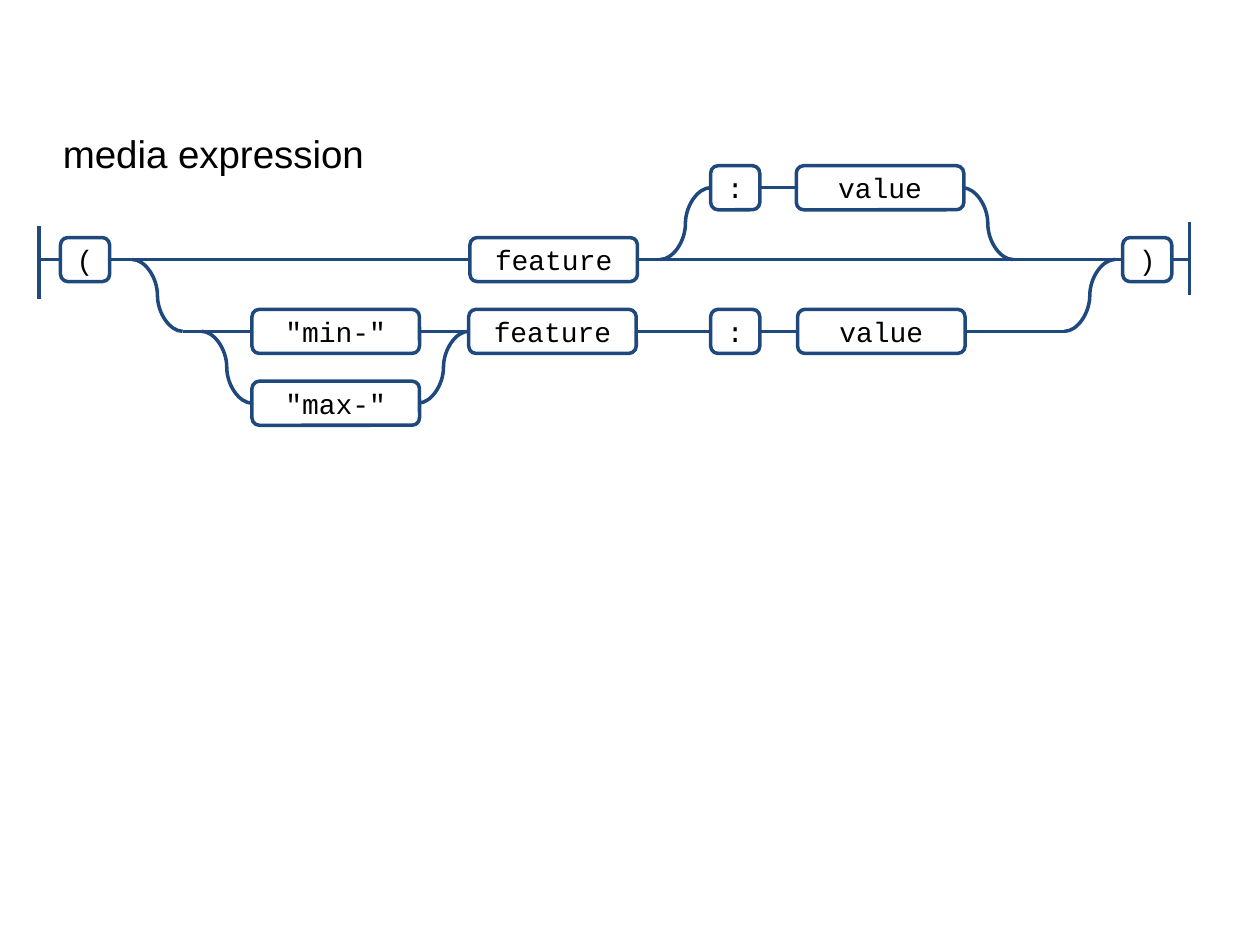
from pptx import Presentation
from pptx.dml.color import RGBColor
from pptx.enum.shapes import MSO_CONNECTOR as Link, MSO_SHAPE as Preset
from pptx.enum.text import MSO_ANCHOR as Anchor, PP_ALIGN as Align
from pptx.oxml.ns import qn
from pptx.util import Inches, Pt
from lxml.etree import SubElement

COLORS = {"track": "1F497D", "token": "FFFFFF", "text": "000000"}
TOKEN_HEIGHT, NARROW, WIDE = 0.35, 0.39, 1.33
BEND = 0.4
UPPER, MAIN, LOWER, BOTTOM = 1.49, 2.06, 2.63, 3.2


class RailroadDiagram:
    """Draws the tokens and tracks of a syntax diagram on one slide."""

    def __init__(self, slide):
        self.shapes = slide.shapes

    def color(self, name):
        return RGBColor.from_string(COLORS[name])

    def label(self, frame, text, font_name, size):
        frame.text = text
        font = frame.paragraphs[0].runs[0].font
        font.name, font.size = font_name, Pt(size)
        font.color.rgb = self.color("text")

    def title(self, text, left, top, width, height):
        box = self.shapes.add_textbox(*map(Inches, (left, top, width, height)))
        box.text_frame.word_wrap = True
        self.label(box.text_frame, text, "Arial", 22)

    def token(self, text, left, row, width):
        bounds = (left, row - TOKEN_HEIGHT / 2, width, TOKEN_HEIGHT)
        token = self.shapes.add_shape(
            Preset.FLOWCHART_ALTERNATE_PROCESS, *map(Inches, bounds))
        token.shadow.inherit = False
        token.fill.solid()
        token.fill.fore_color.rgb = self.color("token")
        token.line.color.rgb = self.color("track")
        token.line.width = Pt(2)
        frame = token.text_frame
        self.label(frame, text, "Courier New", 16)
        frame.vertical_anchor = Anchor.MIDDLE
        frame.paragraphs[0].alignment = Align.CENTER

    def track(self, start, end, weight=1.5, kind=Link.STRAIGHT):
        track = self.shapes.add_connector(kind, *map(Inches, start + end))
        track.line.color.rgb = self.color("track")
        track.line.width = Pt(weight)
        SubElement(track._element.spPr, qn("a:effectLst"))

    def branch(self, left, start_row, end_row):
        self.track((left, start_row), (left + BEND, end_row), 2, Link.CURVE)


def main():
    deck = Presentation()
    deck.slide_width, deck.slide_height = Inches(10), Inches(7.5)
    diagram = RailroadDiagram(deck.slides.add_slide(deck.slide_layouts[6]))

    for left, right, row in ((0.31, 9.44, MAIN), (1.45, 8.45, LOWER),
                             (6.03, 6.33, UPPER)):
        diagram.track((left, row), (right, row))
    for x, top in ((0.31, 1.79), (9.44, 1.76)):
        diagram.track((x, top), (x, top + 0.58), 2)

    for left, start_row, end_row in (
            (1.05, MAIN, LOWER), (1.6, LOWER, BOTTOM), (3.32, BOTTOM, LOWER),
            (5.24, MAIN, UPPER), (7.64, UPPER, MAIN), (8.45, LOWER, MAIN)):
        diagram.branch(left, start_row, end_row)

    for text, left, row, width in (
            ("(", 0.48, MAIN, NARROW),
            ("feature", 3.73, MAIN, WIDE),
            (")", 8.91, MAIN, NARROW),
            (":", 5.64, UPPER, NARROW),
            ("value", 6.32, UPPER, WIDE),
            ('"min-"', 2, LOWER, WIDE),
            ("feature", 3.72, LOWER, WIDE),
            (":", 5.64, LOWER, NARROW),
            ("value", 6.33, LOWER, WIDE),
            ('"max-"', 2, BOTTOM, WIDE)):
        diagram.token(text, left, row, width)

    diagram.title("media expression", 0.4, 0.98, 5.89, 0.47)
    deck.save("out.pptx")


if __name__ == "__main__":
    main()
